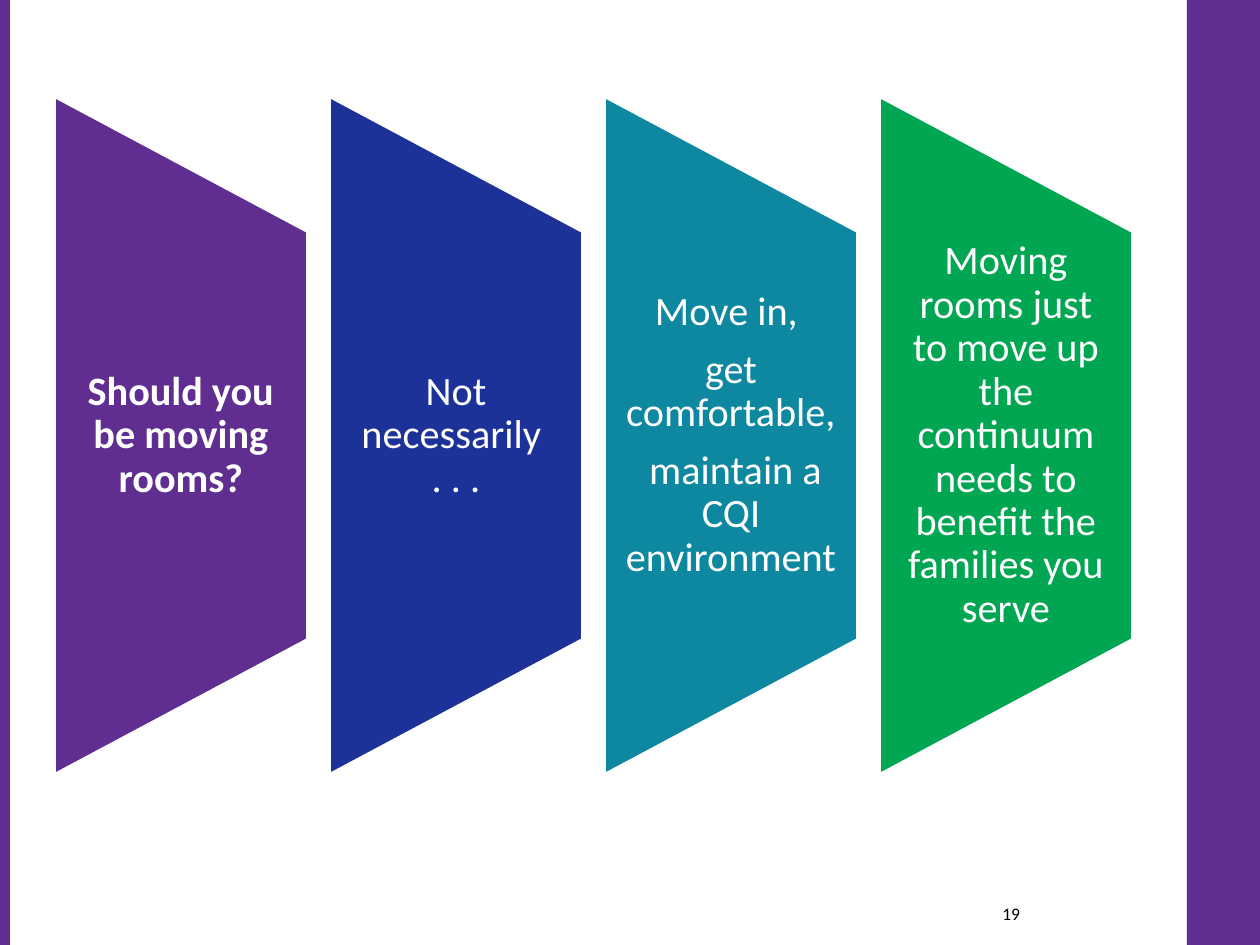
import pptx
import pptx.dml.color
import pptx.enum.shapes
import pptx.enum.text
import pptx.util

RGB = pptx.dml.color.RGBColor
SHAPE = pptx.enum.shapes.MSO_SHAPE
ALIGN = pptx.enum.text.PP_ALIGN
MIDDLE = pptx.enum.text.MSO_ANCHOR.MIDDLE
Pt = pptx.util.Pt

PURPLE = RGB(0x5F, 0x2E, 0x90)
BLUE = RGB(0x1D, 0x32, 0x99)
TEAL = RGB(0x0E, 0x88, 0xA0)
GREEN = RGB(0x00, 0xA6, 0x52)
WHITE = RGB(0xFF, 0xFF, 0xFF)
BLACK = RGB(0x00, 0x00, 0x00)

WIDE, HIGH = 1260, 945
PANELS = [
    (PURPLE, True, ["Should you be moving rooms?"]),
    (BLUE, False, ["Not necessarily \v. . ."]),
    (TEAL, False, ["Move in, ", "get comfortable,",
                   " maintain a CQI environment "]),
    (GREEN, False, ["Moving rooms just to move up the continuum "
                    "needs to benefit the families you serve"]),
]


def px(num):
    return pptx.util.Emu(round(num * 914400 / 126))


def style(item, form):
    for key, val in form.items():
        setattr(item, key, val)


def shape(slide, kind, box, fill):
    item = slide.shapes.add_shape(kind, *map(px, box))
    item.shadow.inherit = False
    item.fill.solid()
    item.fill.fore_color.rgb = fill
    item.line.fill.background()
    return item


def text(slide, box, lines, side, para, font, color):
    item = slide.shapes.add_textbox(*map(px, box))
    frame = item.text_frame
    style(frame, dict(word_wrap=True, vertical_anchor=MIDDLE,
                      margin_left=px(side), margin_right=px(side),
                      margin_top=0, margin_bottom=0))
    frame.text = "\n".join(lines)
    for part in frame.paragraphs:
        style(part, para)
        for run in part.runs:
            style(run.font, dict(font, name="Calibri"))
            run.font.color.rgb = color


def bars(slide, box):
    left, top, wide, high = box
    for start, size in ((1187, 73), (0, 10)):
        shape(slide, SHAPE.RECTANGLE, (left + start, top, size, high), PURPLE)


def panel(slide, box, fill, bold, lines):
    """Draw a trapezoid with its long side at the left and text over it."""
    left, top, wide, high = box
    # The preset is drawn lying down, then turned about its centre.
    turned = (left + (wide - high) / 2, top + (high - wide) / 2, high, wide)
    item = shape(slide, SHAPE.FLOWCHART_MANUAL_OPERATION, turned, fill)
    item.rotation = 270
    item.line.color.rgb = WHITE
    item.line.width = Pt(3.35)
    text(slide, (left, top + high / 5, wide, high * 3 / 5), lines, 20,
         dict(alignment=ALIGN.CENTER, line_spacing=0.9, space_after=Pt(8)),
         dict(size=Pt(23), bold=bold), WHITE)


def row(slide, box):
    left, top, wide, high = box
    gap = 19
    size = (wide - gap * (len(PANELS) - 1)) / len(PANELS)
    for num, (fill, bold, lines) in enumerate(PANELS):
        spot = (left + num * (size + gap), top, size, high)
        panel(slide, spot, fill, bold, lines)


def number(slide, box):
    text(slide, box, ["19"], 12, dict(alignment=ALIGN.RIGHT),
         dict(size=Pt(10)), BLACK)


def main():
    deck = pptx.Presentation()
    style(deck, dict(slide_width=px(WIDE), slide_height=px(HIGH)))
    slide = deck.slides.add_slide(deck.slide_layouts[6])
    bars(slide, (0, 0, WIDE, HIGH))
    row(slide, (53, 94, 1081, 683))
    number(slide, (896, 892, 136, 42))
    deck.save("out.pptx")


if __name__ == "__main__":
    main()
